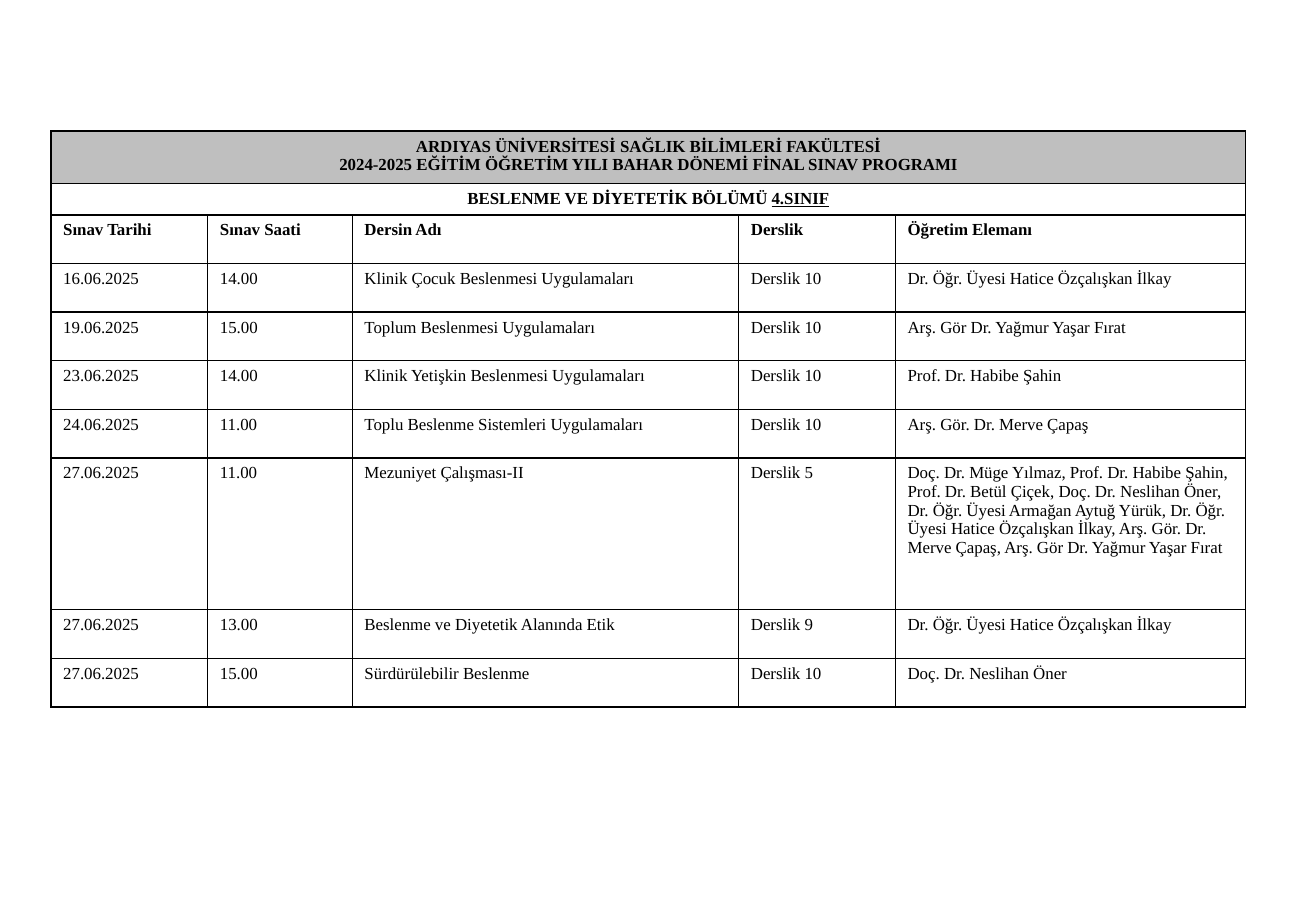
from lxml import etree
from pptx import Presentation
from pptx.dml.color import RGBColor
from pptx.enum import text
from pptx.oxml import ns
from pptx.util import Inches, Pt

BLACK = RGBColor(0, 0, 0)
GREY = RGBColor(0xBF, 0xBF, 0xBF)
FONT = "Times New Roman"
COLS = [1.29, 1.19, 3.18, 1.29, 2.88]
ROWS = [0.43, 0.26] + [0.4] * 5 + [1.25] + [0.4] * 2
TITLE = [
    ["ARDIYAS ÜNİVERSİTESİ SAĞLIK BİLİMLERİ FAKÜLTESİ"],
    ["2024-2025 EĞİTİM ÖĞRETİM YILI BAHAR DÖNEMİ FİNAL SINAV PROGRAMI"],
]
GROUP = [["BESLENME VE DİYETETİK BÖLÜMÜ ", "4.SINIF"]]
HEADS = ["Sınav Tarihi", "Sınav Saati", "Dersin Adı", "Derslik", "Öğretim Elemanı"]
EXAMS = [
    ["16.06.2025", "14.00", "Klinik Çocuk Beslenmesi Uygulamaları", "Derslik 10",
     "Dr. Öğr. Üyesi Hatice Özçalışkan İlkay"],
    ["19.06.2025", "15.00", "Toplum Beslenmesi Uygulamaları", "Derslik 10",
     "Arş. Gör Dr. Yağmur Yaşar Fırat"],
    ["23.06.2025", "14.00", "Klinik Yetişkin Beslenmesi Uygulamaları", "Derslik 10",
     "Prof. Dr. Habibe Şahin"],
    ["24.06.2025", "11.00", "Toplu Beslenme Sistemleri Uygulamaları", "Derslik 10",
     "Arş. Gör. Dr. Merve Çapaş"],
    ["27.06.2025", "11.00", "Mezuniyet Çalışması-II", "Derslik 5",
     "Doç. Dr. Müge Yılmaz, Prof. Dr. Habibe Şahin, Prof. Dr. Betül Çiçek, "
     "Doç. Dr. Neslihan Öner, Dr. Öğr. Üyesi Armağan Aytuğ Yürük, "
     "Dr. Öğr. Üyesi Hatice Özçalışkan İlkay, Arş. Gör. Dr. Merve Çapaş, "
     "Arş. Gör Dr. Yağmur Yaşar Fırat"],
    ["27.06.2025", "13.00", "Beslenme ve Diyetetik Alanında Etik", "Derslik 9",
     "Dr. Öğr. Üyesi Hatice Özçalışkan İlkay"],
    ["27.06.2025", "15.00", "Sürdürülebilir Beslenme", "Derslik 10",
     "Doç. Dr. Neslihan Öner"],
]


def add_borders(cell):
    props = cell._tc.get_or_add_tcPr()
    for side in ("lnL", "lnR", "lnT", "lnB"):
        line = etree.SubElement(props, ns.qn(f"a:{side}"), w=str(Pt(1)))
        fill = etree.SubElement(line, ns.qn("a:solidFill"))
        etree.SubElement(fill, ns.qn("a:srgbClr"), val=str(BLACK))


def write(cell, lines, bold=False, align=text.PP_ALIGN.LEFT):
    """Fill a cell with lines, each a list of runs."""
    frame = cell.text_frame
    for i, runs in enumerate(lines):
        para = frame.add_paragraph() if i else frame.paragraphs[0]
        para.alignment = align
        font = para.font
        font.name, font.size, font.bold = FONT, Pt(10), bold
        font.color.rgb = BLACK
        for part in runs:
            para.add_run().text = part


def add_grid(slide):
    frame = slide.shapes.add_table(
        len(ROWS), len(COLS), Inches(0.42), Inches(1.08),
        Inches(sum(COLS)), Inches(sum(ROWS)))
    table = frame.table
    table.first_row = table.horz_banding = False
    for col, width in zip(table.columns, COLS):
        col.width = Inches(width)
    for row, height in zip(table.rows, ROWS):
        row.height = Inches(height)
    for cell in table.iter_cells():
        add_borders(cell)
        cell.fill.background()
    return table


def add_banner(table, row, lines):
    """Write centred bold lines across a whole row."""
    cell = table.cell(row, 0)
    cell.merge(table.cell(row, len(COLS) - 1))
    write(cell, lines, True, text.PP_ALIGN.CENTER)
    return cell


def main():
    prs = Presentation()
    prs.slide_width, prs.slide_height = Inches(10.83), Inches(7.5)
    slide = prs.slides.add_slide(prs.slide_layouts[6])
    table = add_grid(slide)

    title = add_banner(table, 0, TITLE)
    title.fill.solid()
    title.fill.fore_color.rgb = GREY
    group = add_banner(table, 1, GROUP)
    group.text_frame.paragraphs[0].runs[1].font.underline = True

    for r, values in enumerate([HEADS] + EXAMS, 2):
        for c, value in enumerate(values):
            write(table.cell(r, c), [[value]], bold=values is HEADS)
    prs.save("out.pptx")


if __name__ == "__main__":
    main()
